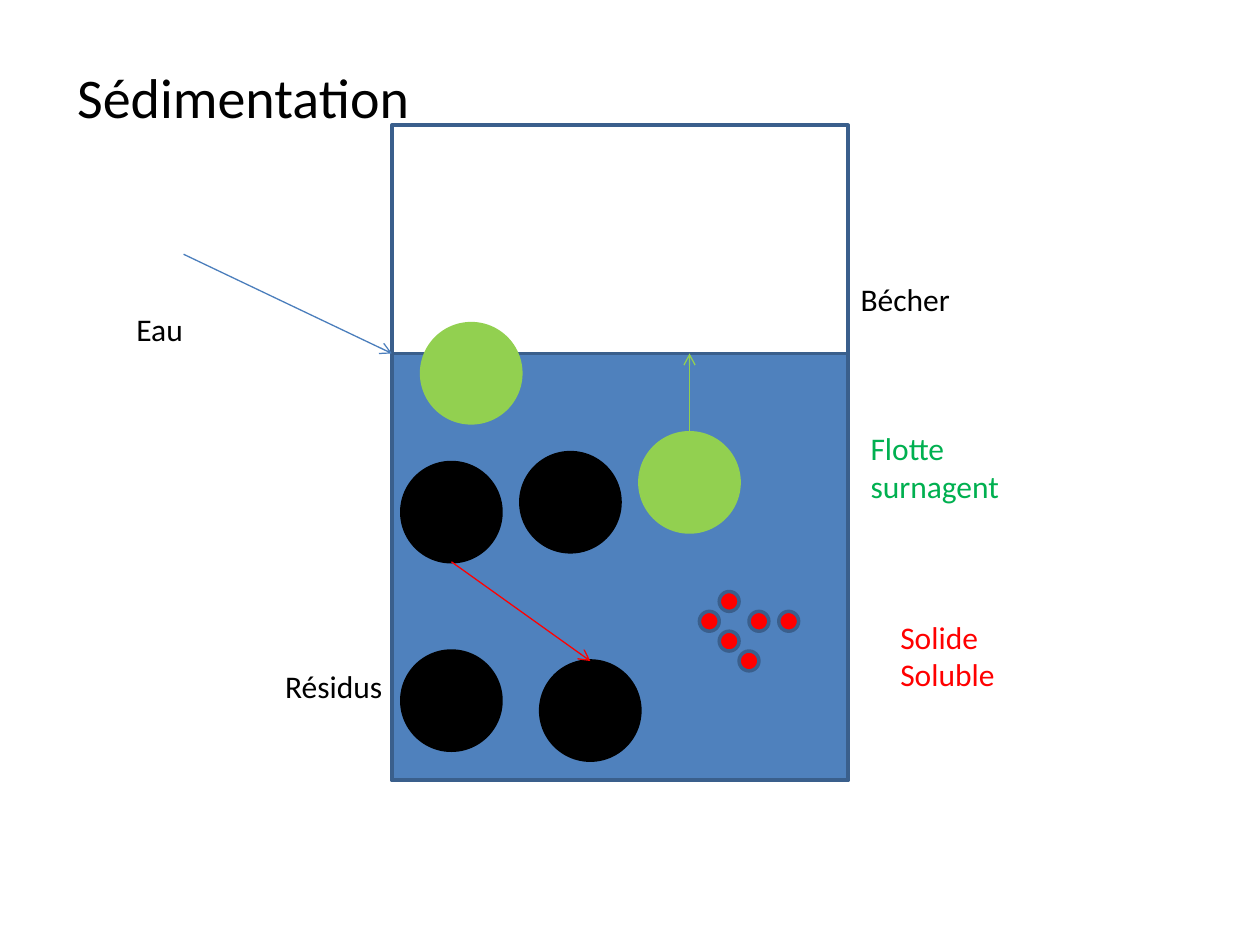
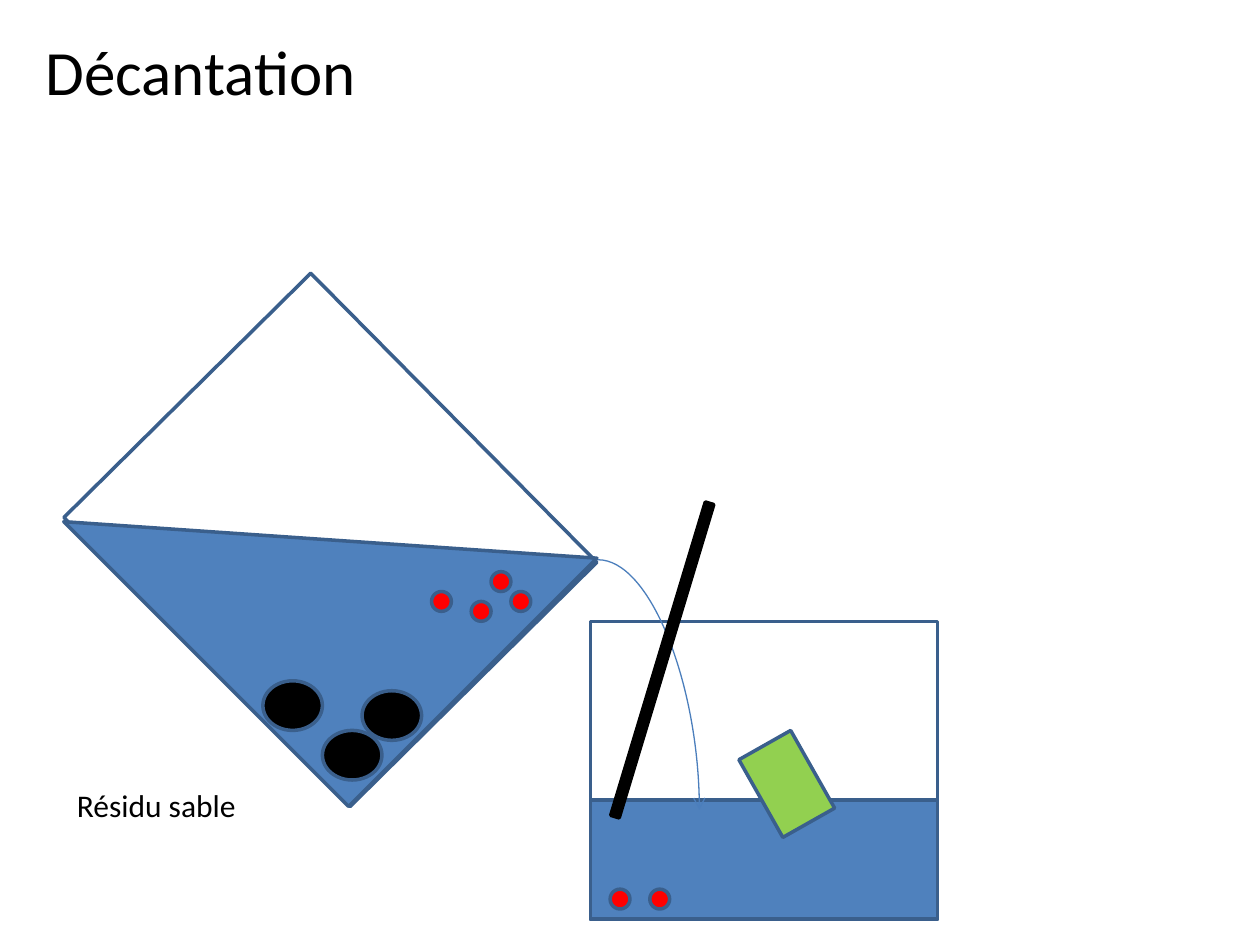
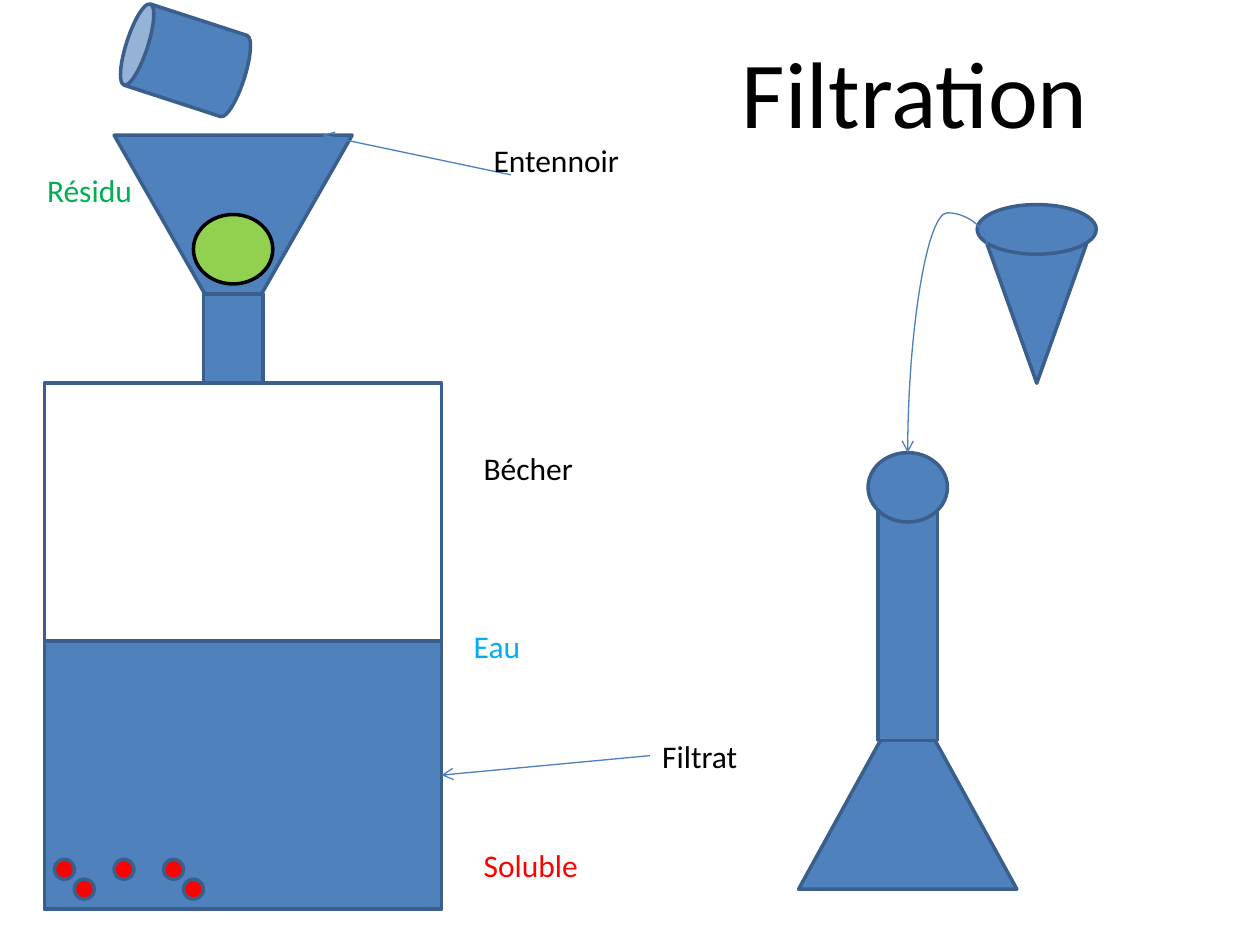
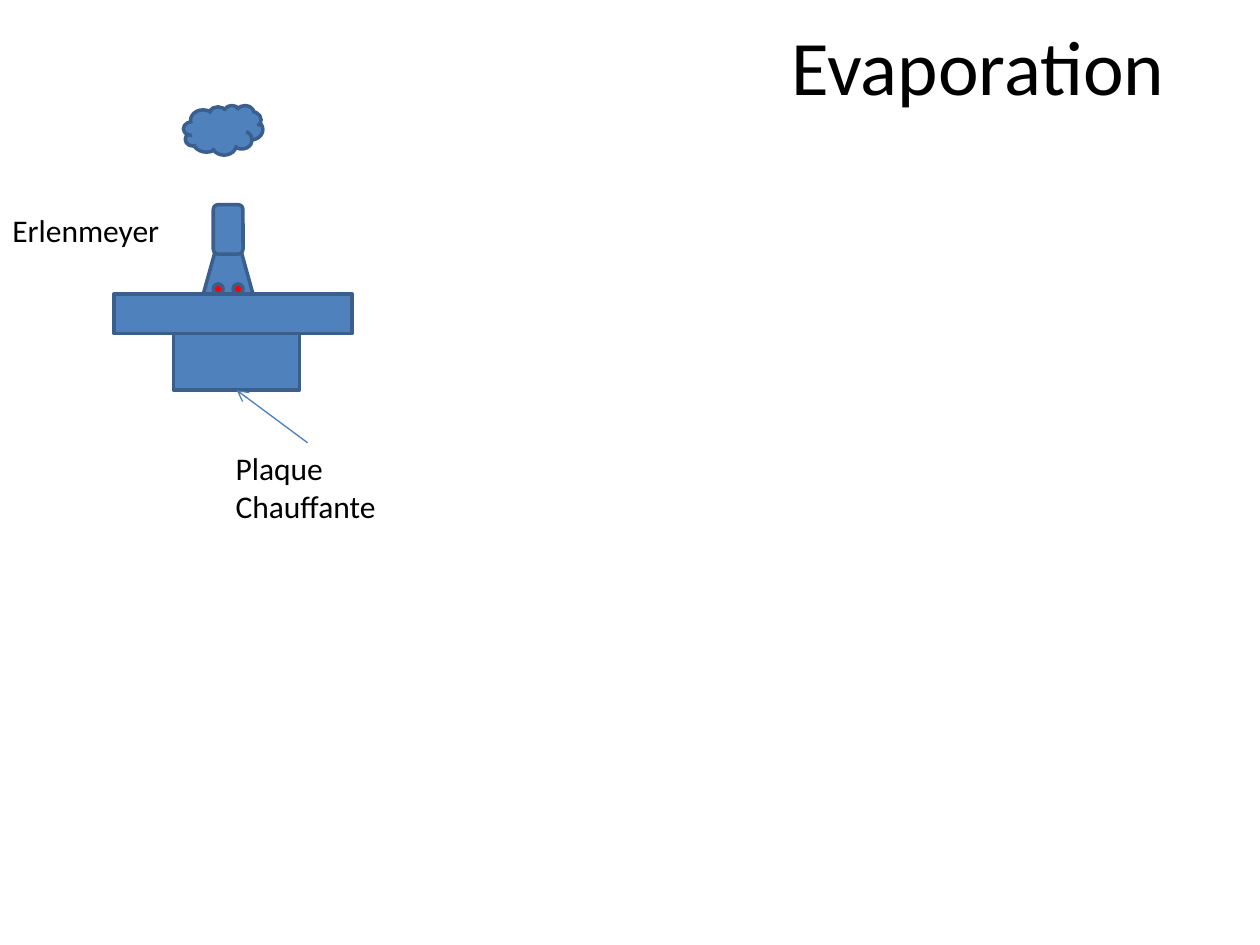
from typing import NamedTuple

from lxml.etree import SubElement
from pptx import Presentation
from pptx.dml.color import RGBColor
from pptx.enum.shapes import MSO_CONNECTOR, MSO_SHAPE
from pptx.enum.text import MSO_ANCHOR, MSO_AUTO_SIZE, PP_ALIGN
from pptx.oxml.ns import qn
from pptx.util import Inches, Mm, Pt

WHITE = RGBColor.from_string("FFFFFF")
BLACK = RGBColor.from_string("000000")
WATER = RGBColor.from_string("4F81BD")
OUTLINE = RGBColor.from_string("3A5F8C")
ARROW = RGBColor.from_string("4B7EBC")
RED = RGBColor.from_string("FF0000")
LIME = RGBColor.from_string("92D050")
GREEN = RGBColor.from_string("00B050")
SKY = RGBColor.from_string("00B0F0")

FONT = "Calibri"
LABEL_POINTS = 18
CELL = Mm(2)
ORIGIN_COLUMN, ORIGIN_ROW = 0.5, 0.625
NARROW, WIDE, TITLE_WIDTH = 17, 24, 58
TOP, LEFT, BOTTOM, RIGHT = range(4)

RECT = MSO_SHAPE.RECTANGLE
OVAL = MSO_SHAPE.OVAL
TRIANGLE = MSO_SHAPE.ISOSCELES_TRIANGLE
UPSIDE_DOWN = 180


class Part(NamedTuple):
    preset: int
    fill: RGBColor
    column: float
    row: float
    width: float
    height: float
    turn: float = 0
    line: RGBColor = OUTLINE
    name: str = ""


class Label(NamedTuple):
    text: str
    column: float
    row: float
    color: RGBColor = BLACK
    width: float = NARROW
    name: str = ""


class Arrow(NamedTuple):
    start: tuple
    end: tuple
    color: RGBColor = ARROW
    preset: str = ""
    turn: int = 0
    bend: int = 0


def beaker(column, row, width, height, depth):
    surface = row + height - depth
    return [
        Part(RECT, WHITE, column, row, width, height),
        Part(RECT, WATER, column, surface, width, depth, name="water"),
    ]


def scatter(fill, column, row, width, height, *pattern):
    return [
        Part(OVAL, fill, column + across, row + down, width, height)
        for down, marks in enumerate(pattern)
        for across, mark in enumerate(marks)
        if mark == "o"
    ]


def grains(column, row, *pattern):
    return scatter(RED, column, row, 2, 2, *pattern)


def ball(color, column, row, name=""):
    return Part(OVAL, color, column, row, 10, 10, line=color, name=name)


def stack(axis, *layers):
    return [
        Part(preset, WATER, axis - width / 2, row, width, height, *turn)
        for preset, row, width, height, *turn in layers
    ]


SLIDES = [
    (
        ("Sédimentation", 6, 5, 32),
        [
            *beaker(39, 12, 46, 66, 43),
            Label("Bécher", 85, 27),
            Arrow((18, 25), (39, 35)),
            Label("Eau", 12, 30),
            ball(BLACK, 54, 66, "settled"),
            ball(BLACK, 40, 65),
            ball(BLACK, 40, 46),
            ball(BLACK, 52, 45),
            Label("Résidus", 27, 66, width=WIDE),
            Arrow((45, 56), ("settled", TOP), RED),
            ball(LIME, 64, 43, "rising"),
            Arrow(("rising", TOP), (69, 35), LIME),
            Label("Flotte surnagent", 86, 42, GREEN),
            *grains(70, 59, "..o", "", "o....o..o", "", "..o", "", "....o"),
            Label("Solide Soluble", 89, 61, RED),
            ball(LIME, 42, 32),
        ],
    ),
    (
        ("Décantation", 2.8, 2, 36),
        [
            Part(RECT, WHITE, 12.3, 36.3, 41, 35, 45.3),
            Part(MSO_SHAPE.RIGHT_TRIANGLE, WATER, 15.1, 33.5, 35.4, 40.6, 315),
            *scatter(BLACK, 26, 68, 6, 5, "o", "..........o", "", "", "", "......o"),
            *grains(43, 57, "......o", "", "o.......o", "....o"),
            *beaker(59, 62, 35, 30, 12),
            Arrow((59.8, 55.8), (70, 81), preset="curvedConnector2"),
            Part(RECT, LIME, 74.3, 75.4, 9, 6, 60.5),
            Label("Résidu sable", 6, 78, width=WIDE),
            *grains(61, 89, "o...o"),
            Part(RECT, BLACK, 65.8, 49.4, 0.9, 33, 16.8, BLACK),
        ],
    ),
    (
        ("Filtration", 73, 2.2, 54),
        [
            *beaker(4, 38, 40, 53, 27),
            *stack(23, (TRIANGLE, 13, 24, 21, UPSIDE_DOWN), (RECT, 29, 6, 9)),
            Part(OVAL, LIME, 19, 21, 8, 7, line=BLACK),
            Arrow((51, 17), (32, 13)),
            Label("Entennoir", 48, 13),
            Label("Bécher", 47, 44),
            Label("Filtrat", 65, 73, width=WIDE, name="filtrate label"),
            Arrow(("filtrate label", LEFT), ("water", RIGHT)),
            *grains(5, 86, "o.....o....o", "", "..o..........o"),
            Label("Résidu", 3, 16, GREEN),
            Label("Eau", 46, 62, SKY),
            Part(MSO_SHAPE.CAN, WATER, 13.9, -0.75, 8.6, 12.4, 288),
            Label("Soluble", 47, 84, RED),
            *stack(91, (TRIANGLE, 69, 22, 20), (RECT, 49, 6, 25), (OVAL, 45, 8, 7)),
            *stack(104, (TRIANGLE, 24, 10, 14, UPSIDE_DOWN), (OVAL, 20, 12, 5)),
            Arrow((105.5, 38.5), (84.5, 30.5), ARROW, "curvedConnector3", 270, -15100),
        ],
    ),
    (
        ("Evaporation", 78, 0.65, 44),
        [
            Part(RECT, WATER, 17, 33, 12.7, 5.7, name="heater"),
            *stack(23, (RECT, 29, 24, 4)),
            Label("Plaque\nChauffante", 22, 44, name="heater label"),
            Arrow(("heater label", TOP), ("heater", BOTTOM)),
            Label("Erlenmeyer", -ORIGIN_COLUMN, 20, width=18),
            *stack(22.5, (TRIANGLE, 20, 5, 9), (MSO_SHAPE.ROUNDED_RECTANGLE, 20, 3, 5)),
            *stack(22, (MSO_SHAPE.CLOUD, 10, 8, 5)),
            *scatter(RED, 21, 28, 1, 1, "o.o"),
        ],
    ),
]


def point(column, row):
    return round((column + ORIGIN_COLUMN) * CELL), round((row + ORIGIN_ROW) * CELL)


def text_height(points, lines=1):
    return Pt(1.2 * points * lines) + Inches(0.1)


def write(box, text, size=LABEL_POINTS, color=BLACK, autosize=MSO_AUTO_SIZE.SHAPE_TO_FIT_TEXT):
    frame = box.text_frame
    frame.text = text
    frame.word_wrap = True
    frame.auto_size = autosize
    frame.vertical_anchor = MSO_ANCHOR.TOP
    for para in frame.paragraphs:
        para.alignment = PP_ALIGN.LEFT
        for span in para.runs:
            span.font.name = FONT
            span.font.size = Pt(size)
            span.font.color.rgb = color


def draw_title(slide, right_edge, text, column, row, points):
    title = slide.shapes.title
    left, top = point(column, row)
    title.left, title.top = left, top
    title.width = min(TITLE_WIDTH * CELL, right_edge - left)
    title.height = text_height(points)
    write(title, text, size=points, autosize=MSO_AUTO_SIZE.NONE)


def draw_part(slide, part, named):
    width, height = round(part.width * CELL), round(part.height * CELL)
    shape = slide.shapes.add_shape(part.preset, *point(part.column, part.row), width, height)
    shape.shadow.inherit = False
    shape.rotation = part.turn
    shape.fill.solid()
    shape.fill.fore_color.rgb = part.fill
    shape.line.color.rgb = part.line
    shape.line.width = Pt(2)
    named[part.name] = shape


def draw_label(slide, label, named):
    lines = 2 if len(label.text) > 0.75 * label.width else 1
    height = text_height(LABEL_POINTS, lines)
    box = slide.shapes.add_textbox(*point(label.column, label.row), label.width * CELL, height)
    write(box, label.text, color=label.color)
    named[label.name] = box


def draw_arrow(slide, arrow, named):
    ends = arrow.start, arrow.end
    joined = [end[0] in named for end in ends]
    start, end = ((0, 0) if join else point(*spot) for join, spot in zip(joined, ends))
    kind = MSO_CONNECTOR.CURVE if arrow.preset else MSO_CONNECTOR.STRAIGHT
    connector = slide.shapes.add_connector(kind, *start, *end)
    connects = connector.begin_connect, connector.end_connect
    for join, connect, target in zip(joined, connects, ends):
        if join:
            name, side = target
            connect(named[name], side)
    connector.line.color.rgb = arrow.color
    connector.line.width = Pt(0.75)
    properties = connector._element.spPr
    SubElement(properties.find(qn("a:ln")), qn("a:tailEnd"), type="arrow")
    SubElement(properties, qn("a:effectLst"))
    if arrow.preset:
        geometry = properties.find(qn("a:prstGeom"))
        geometry.set("prst", arrow.preset)
        properties.find(qn("a:xfrm")).set("rot", str(arrow.turn * 60000))
        if arrow.bend:
            guides = geometry.find(qn("a:avLst"))
            SubElement(guides, qn("a:gd"), name="adj1", fmla=f"val {arrow.bend}")


DRAW = {Part: draw_part, Label: draw_label, Arrow: draw_arrow}


def main():
    deck = Presentation()
    deck.slide_width, deck.slide_height = Inches(10), Inches(7.5)
    title_only = deck.slide_layouts[5]
    for title, items in SLIDES:
        slide = deck.slides.add_slide(title_only)
        draw_title(slide, deck.slide_width, *title)
        named = {}
        for item in items:
            DRAW[type(item)](slide, item, named)
    deck.save("out.pptx")


if __name__ == "__main__":
    main()
